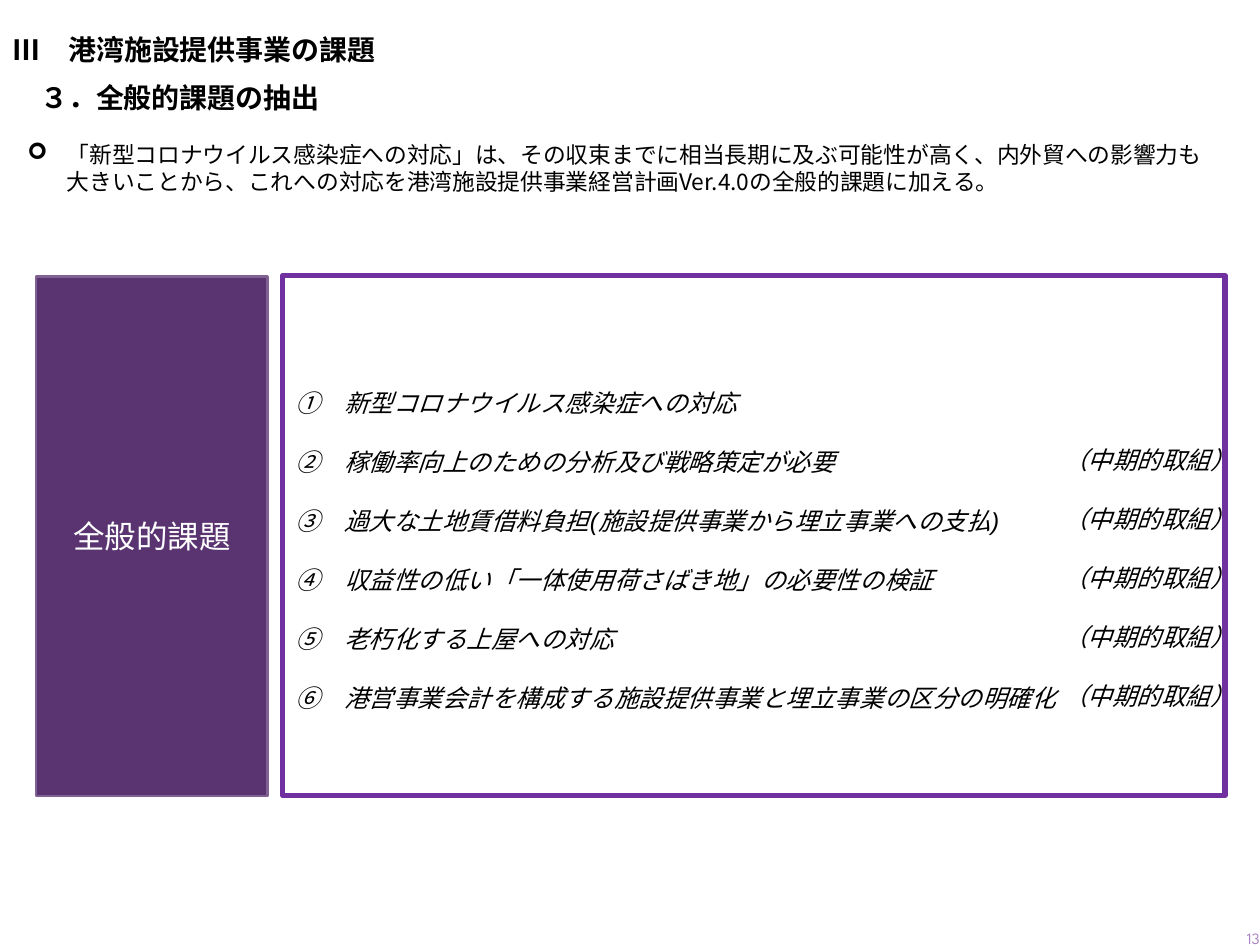
from pptx import Presentation
from pptx.dml.color import RGBColor
from pptx.enum import shapes, text
from pptx.oxml import parse_xml
from pptx.oxml.ns import nsdecls
from pptx.util import Pt

BLACK = "000000"
CJK_FONT = "Noto Sans CJK JP"


def color(hex_string):
    return RGBColor.from_string(hex_string)


def write(shape, lines, size, hex_color=BLACK, font="Arial", align=text.PP_ALIGN.LEFT,
          anchor=text.MSO_ANCHOR.MIDDLE, spacing=1.0, bold=False, italic=False):
    """Fill a shape with one paragraph per line, all in the same style."""
    frame = shape.text_frame
    frame.text = "\n".join(lines)
    frame.word_wrap = True
    frame.auto_size = text.MSO_AUTO_SIZE.NONE
    frame.vertical_anchor = anchor
    for paragraph in frame.paragraphs:
        paragraph.alignment = align
        paragraph.line_spacing = spacing
        paragraph.space_before = Pt(0)
        for run in paragraph.runs:
            run.font.name = font
            run.font.size = Pt(size)
            run.font.bold = bold
            run.font.italic = italic
            run.font.color.rgb = color(hex_color)
            run.font._element.find("{*}latin").addnext(
                parse_xml(f'<a:ea {nsdecls("a")} typeface="{CJK_FONT}"/>'))


presentation = Presentation()
presentation.slide_width = Pt(720)
presentation.slide_height = Pt(540)
slide = presentation.slides.add_slide(presentation.slide_layouts[5])

# Title and subtitle
title = slide.shapes.title
title.left, title.top, title.width, title.height = Pt(0), Pt(15), Pt(621), Pt(49)
subtitle = slide.shapes.add_textbox(Pt(0), Pt(42.5), Pt(621), Pt(49))
for heading, words in ((title, "Ⅲ\u3000港湾施設提供事業の課題"),
                       (subtitle, "\u3000３．全般的課題の抽出")):
    write(heading, [words], 16, anchor=text.MSO_ANCHOR.TOP, bold=True)

# Lead statement with an arrow bullet
lead = slide.shapes.add_textbox(Pt(8.6), Pt(77), Pt(692), Pt(39))
write(lead, ["「新型コロナウイルス感染症への対応」は、その収束までに相当長期に及ぶ可能性が高く、"
             "内外貿への影響力も大きいことから、これへの対応を"
             "港湾施設提供事業経営計画Ver.4.0の全般的課題に加える。"],
      13, font=CJK_FONT, anchor=text.MSO_ANCHOR.TOP)
properties = lead.text_frame.paragraphs[0]._p.get_or_add_pPr()
properties.set("marL", str(Pt(22.5)))
properties.set("indent", str(-Pt(22.5)))
properties.append(parse_xml(f'<a:buFont {nsdecls("a")} typeface="Wingdings"/>'))
properties.append(parse_xml(f'<a:buChar {nsdecls("a")} char="➢"/>'))

# Category panel and issue frame
category = slide.shapes.add_shape(shapes.MSO_SHAPE.RECTANGLE,
                                  Pt(20.5), Pt(158), Pt(132.5), Pt(297))
category.fill.solid()
category.fill.fore_color.rgb = color("5A3471")
issues = slide.shapes.add_shape(shapes.MSO_SHAPE.RECTANGLE,
                                Pt(161.5), Pt(157.5), Pt(538.5), Pt(297))
issues.fill.background()
for panel, line_color, line_width in ((category, "806292", 1.5), (issues, "7030A0", 3)):
    panel.shadow.inherit = False
    panel.line.color.rgb = color(line_color)
    panel.line.width = Pt(line_width)

write(category, ["全般的課題"], 18, "FFFFFF", "League Spartan", text.PP_ALIGN.CENTER)
write(issues, ["①\u3000新型コロナウイルス感染症への対応",
               "②\u3000稼働率向上のための分析及び戦略策定が必要",
               "③\u3000過大な土地賃借料負担(施設提供事業から埋立事業への支払)",
               "④\u3000収益性の低い「一体使用荷さばき地」の必要性の検証",
               "⑤\u3000老朽化する上屋への対応",
               "⑥\u3000港営事業会計を構成する施設提供事業と埋立事業の区分の明確化"],
      14, align=text.PP_ALIGN.JUSTIFY, spacing=2.0, italic=True)

# Time frame of issues ② to ⑥
terms = slide.shapes.add_textbox(Pt(600.5), Pt(192), Pt(124), Pt(259.5))
write(terms, ["（中期的取組）"] * 5, 14, align=text.PP_ALIGN.JUSTIFY, spacing=2.0, italic=True)

page_number = slide.shapes.add_textbox(Pt(687), Pt(521.5), Pt(40), Pt(29))
write(page_number, ["13"], 9, "AD84C6", "League Spartan", text.PP_ALIGN.RIGHT)

presentation.save("out.pptx")
